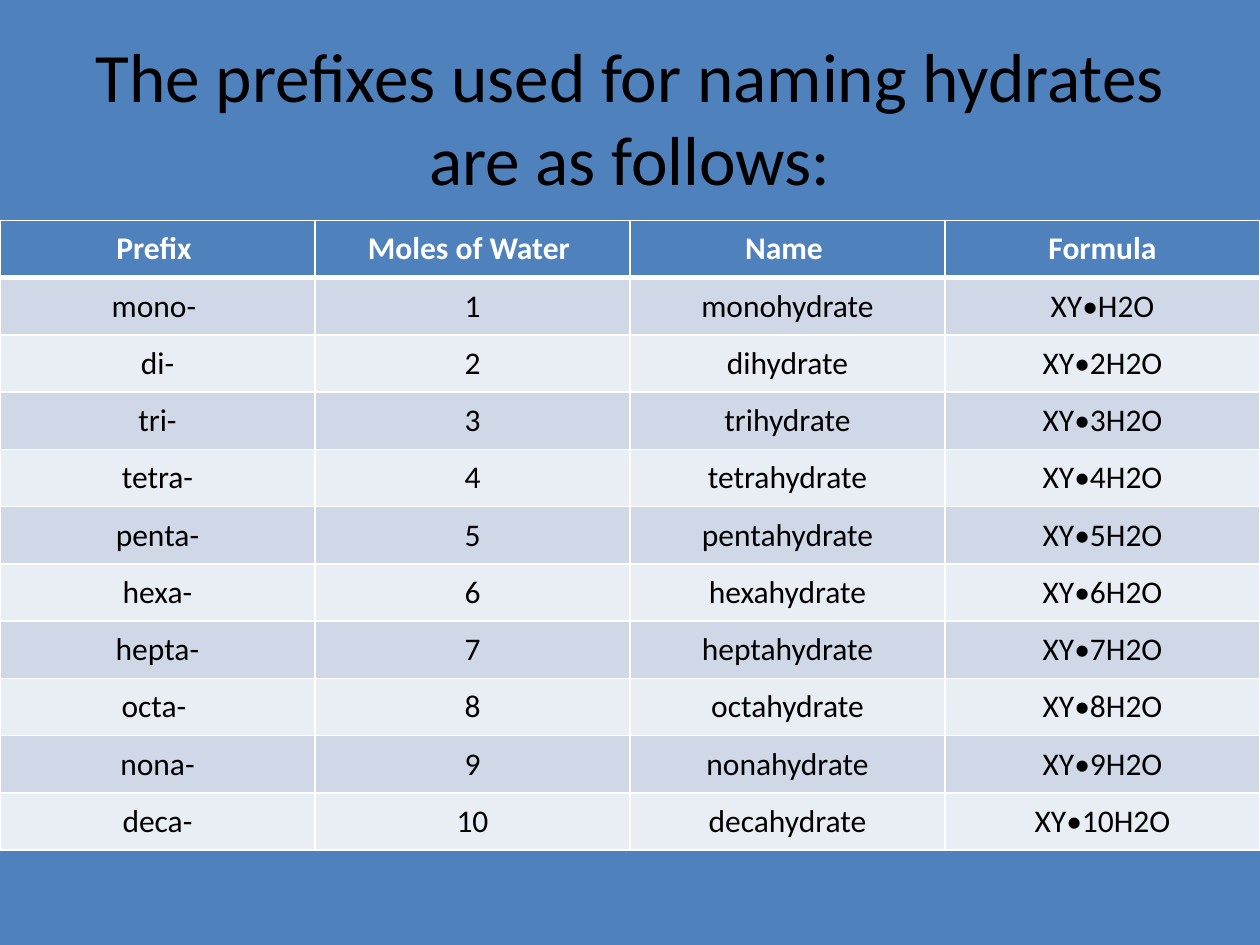
from dataclasses import dataclass

from lxml import etree
from pptx import Presentation
from pptx.dml.color import RGBColor
from pptx.enum.text import MSO_ANCHOR, PP_ALIGN
from pptx.oxml.ns import qn
from pptx.util import Inches, Pt

CENTER = PP_ALIGN.CENTER
MIDDLE = MSO_ANCHOR.MIDDLE


@dataclass(frozen=True)
class Theme:
    font: str = "Calibri"
    blue: str = "4F81BD"
    bands: tuple = ("D0D8E8", "E9EDF4")
    black: str = "000000"
    white: str = "FFFFFF"
    title: float = 39.6
    body: float = 18
    thin: float = 1
    thick: float = 3


THEME = Theme()
TITLE = "The prefixes used for naming hydrates are as follows:"
HEADS = ["Prefix ", "Moles of Water ", "Name ", "Formula"]
STEMS = ["mono- ", "di-", "tri-", "tetra-", "penta-",
         "hexa-", "hepta-", "octa- ", "nona-", "deca-"]


def paint(fill, color):
    fill.solid()
    fill.fore_color.rgb = RGBColor.from_string(color)


def write(frame, text, size, color, bold=False):
    frame.text = text
    para = frame.paragraphs[0]
    para.alignment = CENTER
    font = para.runs[0].font
    font.name = THEME.font
    font.size = Pt(size)
    font.bold = bold
    font.color.rgb = RGBColor.from_string(color)


def add_title(slide):
    box = slide.shapes.add_textbox(Inches(0.5), Inches(0.3),
                                   Inches(9), Inches(1.25))
    frame = box.text_frame
    frame.word_wrap = True
    frame.vertical_anchor = MIDDLE
    write(frame, TITLE, THEME.title, THEME.black)


def add_edges(cell, top, bottom):
    props = cell._tc.get_or_add_tcPr()
    edges = {"L": THEME.thin, "R": THEME.thin, "T": top, "B": bottom}
    for side, width in edges.items():
        line = etree.SubElement(props, qn(f"a:ln{side}"), w=str(Pt(width)))
        fill = etree.SubElement(line, qn("a:solidFill"))
        etree.SubElement(fill, qn("a:srgbClr"), val=THEME.white)


def style_cell(cell, text, row):
    head = row == 0
    # The thick rule lies between the header and the first body row
    add_edges(cell,
              top=THEME.thick if row == 1 else THEME.thin,
              bottom=THEME.thick if head else THEME.thin)
    paint(cell.fill, THEME.blue if head else THEME.bands[(row - 1) % 2])
    cell.vertical_anchor = MIDDLE
    write(cell.text_frame, text, THEME.body,
          THEME.white if head else THEME.black, head)


def hydrate(count, stem):
    name = stem.strip().rstrip("-") + "hydrate"
    moles = "" if count == 1 else count
    return [stem, str(count), name, f"XY•{moles}H2O"]


def add_grid(slide, rows):
    table = slide.shapes.add_table(len(rows), len(HEADS), 0, Inches(1.75),
                                   Inches(10), Inches(5)).table
    for line in table.rows:
        line.height = Inches(5 / len(rows))
    for row, texts in enumerate(rows):
        for col, text in enumerate(texts):
            style_cell(table.cell(row, col), text, row)


def main():
    deck = Presentation()
    deck.slide_width, deck.slide_height = Inches(10), Inches(7.5)
    slide = deck.slides.add_slide(deck.slide_layouts[6])
    paint(slide.background.fill, THEME.blue)

    # Heading
    add_title(slide)

    # Table of prefixes
    body = [hydrate(count, stem) for count, stem in enumerate(STEMS, 1)]
    add_grid(slide, [HEADS] + body)

    deck.save("out.pptx")


if __name__ == "__main__":
    main()
